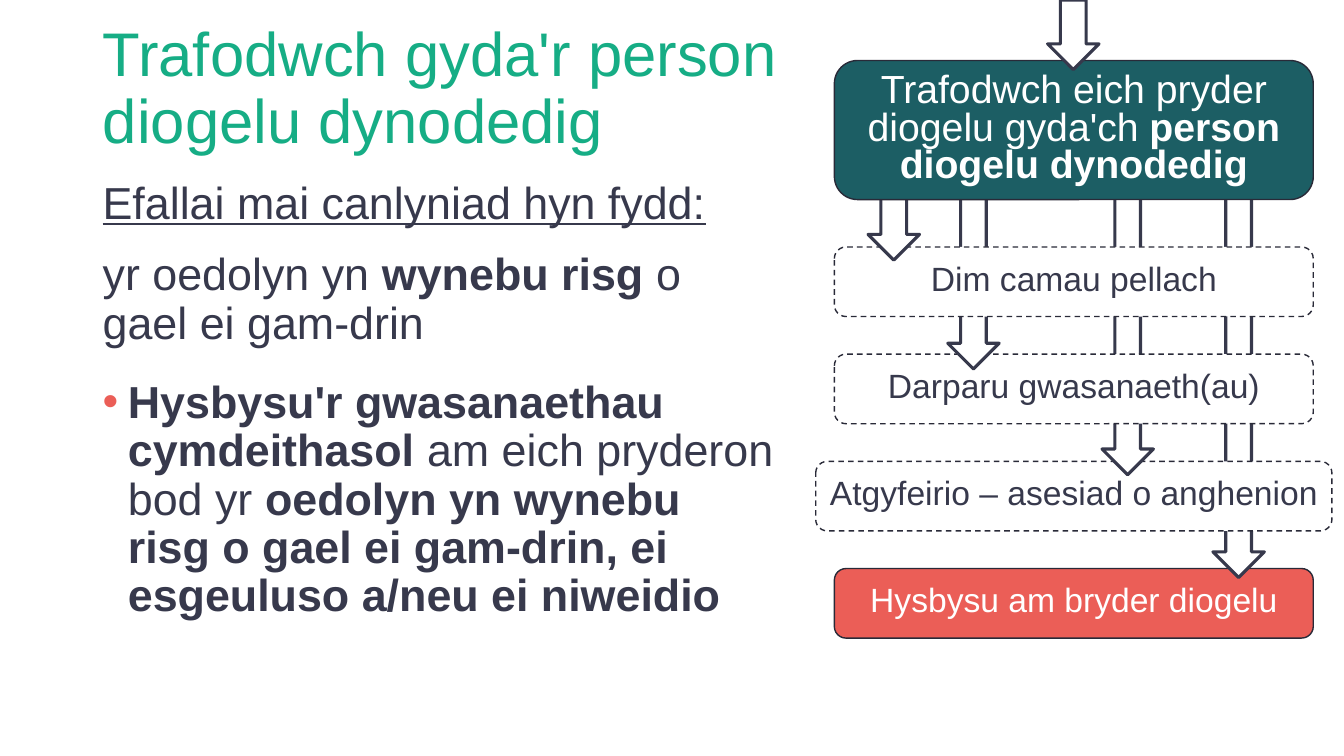
from lxml import etree
from pptx import Presentation
from pptx.dml.color import RGBColor
from pptx.enum.dml import MSO_LINE
from pptx.enum.shapes import MSO_SHAPE as Preset
from pptx.enum.text import MSO_ANCHOR as Anchor, MSO_AUTO_SIZE as AutoSize, PP_ALIGN as Align
from pptx.oxml.ns import qn
from pptx.util import Inches, Pt

COLORS = {"green": "16AD85", "ink": "37394C", "edge": "292A38", "teal": "1C5E64",
          "coral": "EB5E57", "white": "FFFFFF"}

TITLE = [("Trafodwch gyda'r person diogelu dynodedig", False)]
LEAD = [("Efallai mai canlyniad hyn fydd:", False)]
RISK = [("yr oedolyn yn", False), (" wynebu risg ", True), ("o gael ei gam-drin", False)]
REPORT = [("Hysbysu'r gwasanaethau cymdeithasol ", True),
          ("am eich pryderon bod yr ", False),
          ("oedolyn yn wynebu risg o gael ei gam-drin, ei esgeuluso a/neu ei niweidio", True)]
CONCERN = [("Trafodwch eich pryder diogelu gyda'ch ", False), ("person diogelu dynodedig", True)]

OUTCOMES = [
    {"label": "Dim camau pellach", "width": 4.75, "fill": "white", "arrow": (8.61, 1.89, 0.69)},
    {"label": "Darparu gwasanaeth(au)", "width": 4.75, "fill": "white", "arrow": (9.4, 1.84, 1.82)},
    {"label": "Atgyfeirio – asesiad o anghenion", "width": 5.12, "fill": "white",
     "arrow": (10.93, 1.53, 3.18)},
    {"label": "Hysbysu am bryder diogelu", "width": 4.75, "fill": "coral",
     "arrow": (12.03, 1.23, 4.5)},
]
ENTRY_ARROW = (10.39, 0, 0.69)
FIRST_TOP, LAST_TOP, ROW_HEIGHT = 2.45, 5.64, 0.69
FLOW_CENTER = 10.65
ARROW_WIDTH = 0.51


def rgb(name):
    return RGBColor.from_string(COLORS[name])


def write(para, spans, size, color, underline=None, **layout):
    for name, value in layout.items():
        setattr(para, name, value)
    for text, bold in spans:
        span = para.add_run()
        span.text = text
        span.font.color.rgb = rgb(color)
        look = {"name": "Arial", "size": Pt(size), "bold": bold, "underline": underline}
        for name, value in look.items():
            setattr(span.font, name, value)


def set_frame(frame, anchor):
    for name, value in {"word_wrap": True, "auto_size": AutoSize.NONE,
                        "vertical_anchor": anchor}.items():
        setattr(frame, name, value)


def add_bullet(para):
    props = para._p.get_or_add_pPr()
    props.set("marL", str(Inches(0.25)))
    props.set("indent", str(Inches(-0.25)))
    color = etree.SubElement(props, qn("a:buClr"))
    etree.SubElement(color, qn("a:srgbClr"), val=COLORS["coral"])
    etree.SubElement(props, qn("a:buFont"), typeface="Arial")
    etree.SubElement(props, qn("a:buChar"), char="•")


def add_shape(page, preset, place, fill, edge, weight):
    shape = page.shapes.add_shape(preset, *map(Inches, place))
    shape.shadow.inherit = False
    shape.fill.solid()
    shape.fill.fore_color.rgb = rgb(fill)
    shape.line.color.rgb = rgb(edge)
    shape.line.width = Pt(weight)
    return shape


def add_arrow(page, left, top, height):
    add_shape(page, Preset.DOWN_ARROW, (left, top, ARROW_WIDTH, height), "white", "ink", 2.25)


def add_step(page, spans, top, width, height, fill, size):
    place = (FLOW_CENTER - width / 2, top, width, height)
    box = add_shape(page, Preset.ROUNDED_RECTANGLE, place, fill, "edge", 1)
    if fill == "white":
        box.line.dash_style = MSO_LINE.DASH
    frame = box.text_frame
    set_frame(frame, Anchor.MIDDLE)
    frame.margin_left = frame.margin_right = Inches(0.08)
    write(frame.paragraphs[0], spans, size, "ink" if fill == "white" else "white",
          alignment=Align.CENTER, line_spacing=0.8)


def add_text(page, place):
    box = page.shapes.add_textbox(*map(Inches, place))
    set_frame(box.text_frame, Anchor.TOP)
    return box.text_frame


def main():
    deck = Presentation()
    deck.slide_width, deck.slide_height = Inches(13.33), Inches(7.5)
    page = deck.slides.add_slide(deck.slide_layouts[5])

    title = page.shapes.title
    for name, value in {"left": 0.92, "top": 0.59, "width": 7.06, "height": 0.61}.items():
        setattr(title, name, Inches(value))
    set_frame(title.text_frame, Anchor.MIDDLE)
    write(title.text_frame.paragraphs[0], TITLE, 44, "green",
          alignment=Align.LEFT, line_spacing=0.9)

    body = add_text(page, (0.92, 2.45, 6.86, 4.15))
    write(body.paragraphs[0], RISK, 32, "ink", line_spacing=0.9, space_after=Pt(12))
    report = body.add_paragraph()
    report.line_spacing, report.space_before, report.space_after = 0.9, Pt(10), Pt(12)
    add_bullet(report)
    write(report, REPORT, 32, "ink")

    pitch = (LAST_TOP - FIRST_TOP) / (len(OUTCOMES) - 1)
    for row, outcome in reversed(list(enumerate(OUTCOMES))):
        add_step(page, [(outcome["label"], False)], FIRST_TOP + row * pitch,
                 outcome["width"], ROW_HEIGHT, outcome["fill"], 24)
        add_arrow(page, *outcome["arrow"])
    add_step(page, CONCERN, 0.6, 4.75, 1.38, "teal", 28)
    add_arrow(page, *ENTRY_ARROW)

    lead = add_text(page, (0.92, 1.74, 6.86, 0.56))
    write(lead.paragraphs[0], LEAD, 32, "ink", underline=True,
          line_spacing=0.9, space_after=Pt(12))

    deck.save("out.pptx")


if __name__ == "__main__":
    main()
